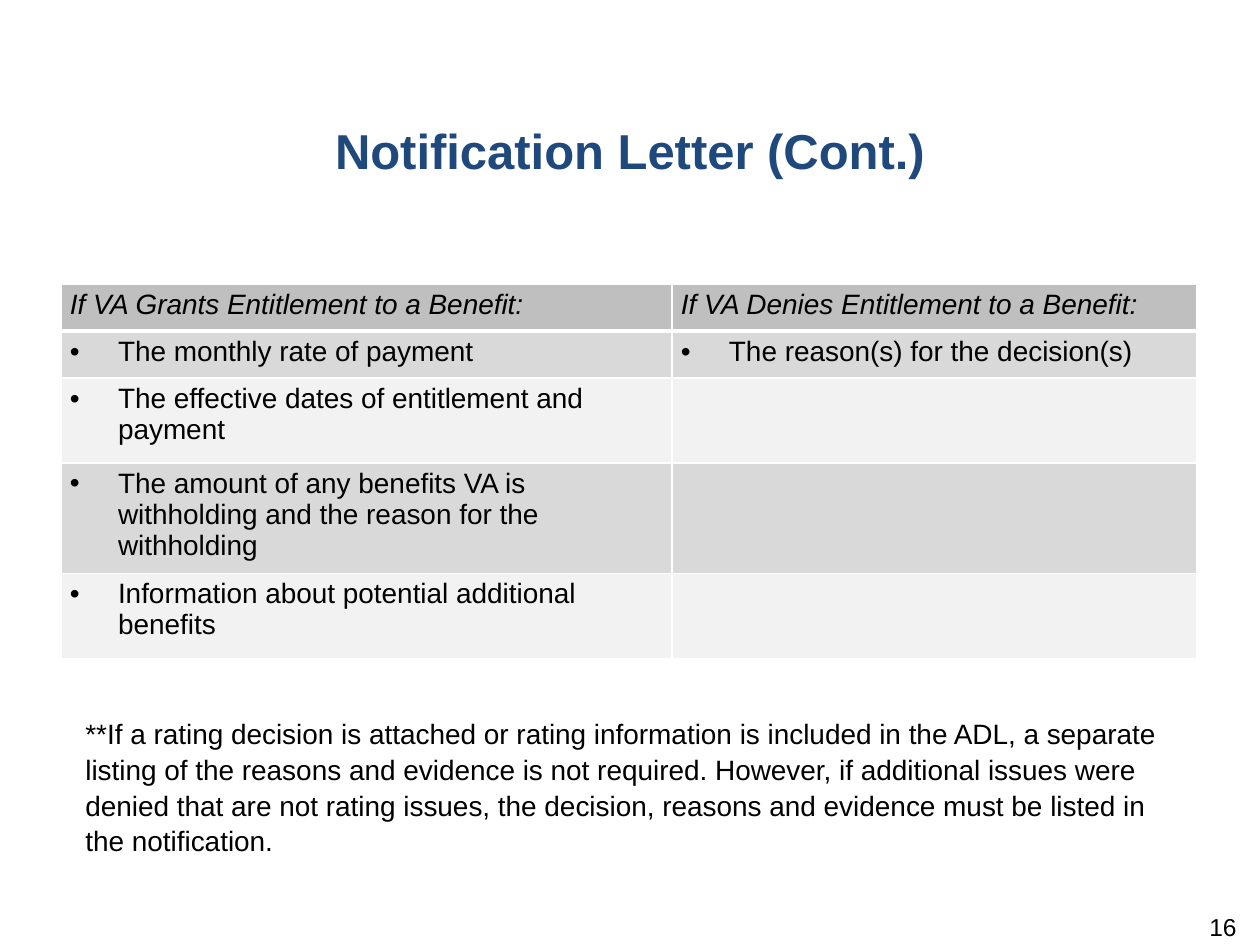
from lxml import etree
from pptx import Presentation
from pptx.dml.color import RGBColor
from pptx.enum.text import PP_ALIGN
from pptx.oxml.ns import qn
from pptx.util import Pt

LEFT, CENTER, RIGHT = PP_ALIGN.LEFT, PP_ALIGN.CENTER, PP_ALIGN.RIGHT
EMU_PER_PX = 914400 / 126
BLANK_LAYOUT = 6

HEADINGS = ["If VA Grants Entitlement to a Benefit:",
            "If VA Denies Entitlement to a Benefit:"]
CONTENTS = [
    ["The monthly rate of payment", "The reason(s) for the decision(s)"],
    ["The effective dates of entitlement and payment", ""],
    ["The amount of any benefits VA is withholding and the reason for the withholding", ""],
    ["Information about potential additional benefits", ""],
]
FOOTNOTE = (
    "**If a rating decision is attached or rating information is included in the ADL, "
    "a separate listing of the reasons and evidence is not required. However, if "
    "additional issues were denied that are not rating issues, the decision, reasons "
    "and evidence must be listed in the notification."
)


def px(length):
    return round(length * EMU_PER_PX)


def color(hex_string):
    return RGBColor.from_string(hex_string)


class SlideBuilder:
    font_name = "Arial"
    text_color = "000000"
    title_color = "1F497D"
    border_color = "FFFFFF"
    header_fill = "BFBFBF"
    band_fills = ["D9D9D9", "F2F2F2"]
    body_size = 16
    line_spacing = 1.07
    bullet_indent = 48

    def __init__(self, slide):
        self.slide = slide

    def format_runs(self, paragraph, size, hex_color, bold=False, italic=False):
        for run in paragraph.runs:
            font = run.font
            font.name = self.font_name
            font.size = Pt(size)
            font.bold = bold
            font.italic = italic
            font.color.rgb = color(hex_color)

    def text_box(self, text, left, top, width, height, size=body_size,
                 hex_color=text_color, align=LEFT, bold=False, inset_top=6):
        shape = self.slide.shapes.add_textbox(px(left), px(top), px(width), px(height))
        frame = shape.text_frame
        frame.word_wrap = True
        frame.margin_top = px(inset_top)
        frame.text = text
        paragraph = frame.paragraphs[0]
        paragraph.alignment = align
        paragraph.line_spacing = self.line_spacing
        self.format_runs(paragraph, size, hex_color, bold)

    def add_bullet(self, paragraph):
        properties = paragraph._p.get_or_add_pPr()
        properties.set("marL", str(px(self.bullet_indent)))
        properties.set("indent", str(-px(self.bullet_indent)))
        etree.SubElement(properties, qn("a:buFont"), typeface=self.font_name)
        etree.SubElement(properties, qn("a:buChar"), char="•")

    def set_borders(self, cell, top, bottom):
        """Draw the cell's borders; top and bottom are widths in points."""
        properties = cell._tc.get_or_add_tcPr()
        for tag, width in (("lnL", 1), ("lnR", 1), ("lnT", top), ("lnB", bottom)):
            line = etree.SubElement(properties, qn(f"a:{tag}"), w=str(Pt(width)))
            fill = etree.SubElement(line, qn("a:solidFill"))
            etree.SubElement(fill, qn("a:srgbClr"), val=self.border_color)

    def fill_cell(self, cell, text, row):
        is_header = row == 0
        self.set_borders(cell, top=3 if row == 1 else 1, bottom=3 if is_header else 1)
        cell.fill.solid()
        fill = self.header_fill if is_header else self.band_fills[(row - 1) % 2]
        cell.fill.fore_color.rgb = color(fill)
        cell.margin_left = cell.margin_right = px(9)
        cell.margin_top = cell.margin_bottom = px(5)
        if not text:
            return
        cell.text_frame.text = text
        paragraph = cell.text_frame.paragraphs[0]
        if not is_header:
            self.add_bullet(paragraph)
        self.format_runs(paragraph, self.body_size, self.text_color, italic=is_header)

    def table(self, rows, left, top, column_widths, row_heights):
        frame = self.slide.shapes.add_table(
            len(rows), len(column_widths), px(left), px(top),
            px(sum(column_widths)), px(sum(row_heights)))
        table = frame.table
        for column, width in zip(table.columns, column_widths):
            column.width = px(width)
        for row, height in zip(table.rows, row_heights):
            row.height = px(height)
        for row_index, texts in enumerate(rows):
            for column_index, text in enumerate(texts):
                self.fill_cell(table.cell(row_index, column_index), text, row_index)


def main():
    presentation = Presentation()
    presentation.slide_width = px(1260)
    presentation.slide_height = px(945)
    layout = presentation.slide_layouts[BLANK_LAYOUT]
    builder = SlideBuilder(presentation.slides.add_slide(layout))

    builder.text_box("Notification Letter (Cont.)", 0, 110, 1260, 150, size=28,
                     hex_color=builder.title_color, align=CENTER, bold=True)
    builder.table([HEADINGS] + CONTENTS, 61, 284, [611, 525], [47, 47, 85, 103, 85])
    builder.text_box("16", 955, 910, 294, 50, size=14, align=RIGHT, inset_top=0)
    builder.text_box(FOOTNOTE, 73, 708, 1124, 149)

    presentation.save("out.pptx")


if __name__ == "__main__":
    main()
